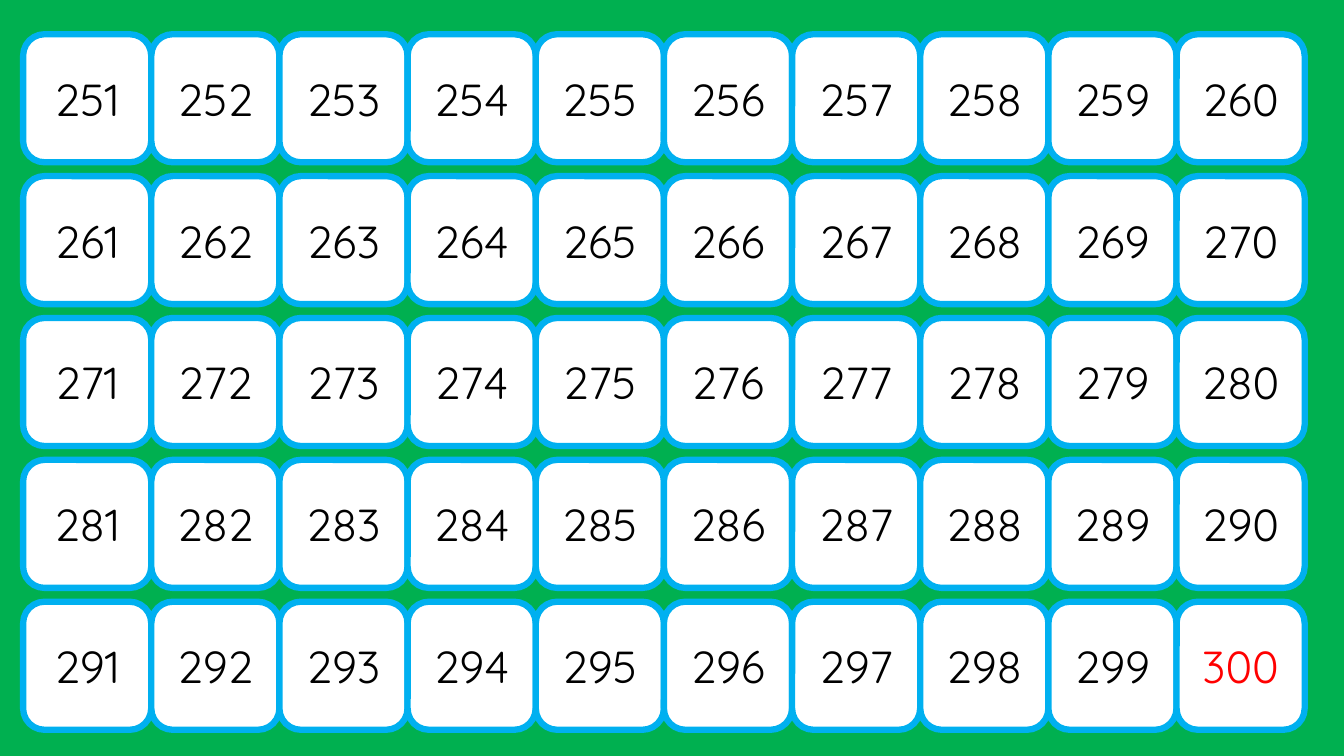
from pptx import Presentation
from pptx.dml.color import RGBColor as RGB
from pptx.enum.shapes import MSO_SHAPE as Shape
from pptx.enum.text import MSO_ANCHOR as Anchor, PP_ALIGN as Align
from pptx.util import Inches, Pt

NUMBERS = range(251, 301)
HIGHLIGHTED = 300
COLS, ROWS = 10, 5

THEME = {
    "background": RGB(0x00, 0xB0, 0x50),
    "card": RGB(0xFF, 0xFF, 0xFF),
    "border": RGB(0x00, 0xB0, 0xF0),
    "text": RGB(0x00, 0x00, 0x00),
    "highlight": RGB(0xFF, 0x00, 0x00),
    "font": "Quicksand",
    "size": Pt(32),
    "border_width": Pt(4.5),
}

CARD = 1.27
LEFT, RIGHT = 0.23, 11.67
TOP, BOTTOM = 0.34, 5.97
STEP_X = (RIGHT - LEFT) / (COLS - 1)
STEP_Y = (BOTTOM - TOP) / (ROWS - 1)


def add_card(slide, number, x, y):
    sp = slide.shapes.add_shape(
        Shape.ROUNDED_RECTANGLE, Inches(x), Inches(y), Inches(CARD), Inches(CARD))
    sp.shadow.inherit = False
    sp.fill.solid()
    sp.fill.fore_color.rgb = THEME["card"]
    sp.line.color.rgb = THEME["border"]
    sp.line.width = THEME["border_width"]
    tf = sp.text_frame
    tf.vertical_anchor = Anchor.MIDDLE
    p = tf.paragraphs[0]
    p.alignment = Align.CENTER
    r = p.add_run()
    r.text = str(number)
    r.font.name = THEME["font"]
    r.font.size = THEME["size"]
    r.font.color.rgb = THEME["highlight" if number == HIGHLIGHTED else "text"]


def main():
    prs = Presentation()
    prs.slide_width, prs.slide_height = Inches(13.33), Inches(7.5)
    slide = prs.slides.add_slide(prs.slide_layouts[6])
    slide.background.fill.solid()
    slide.background.fill.fore_color.rgb = THEME["background"]
    for i, number in enumerate(NUMBERS):
        row, col = divmod(i, COLS)
        add_card(slide, number, LEFT + col * STEP_X, TOP + row * STEP_Y)
    prs.save("out.pptx")


if __name__ == "__main__":
    main()
